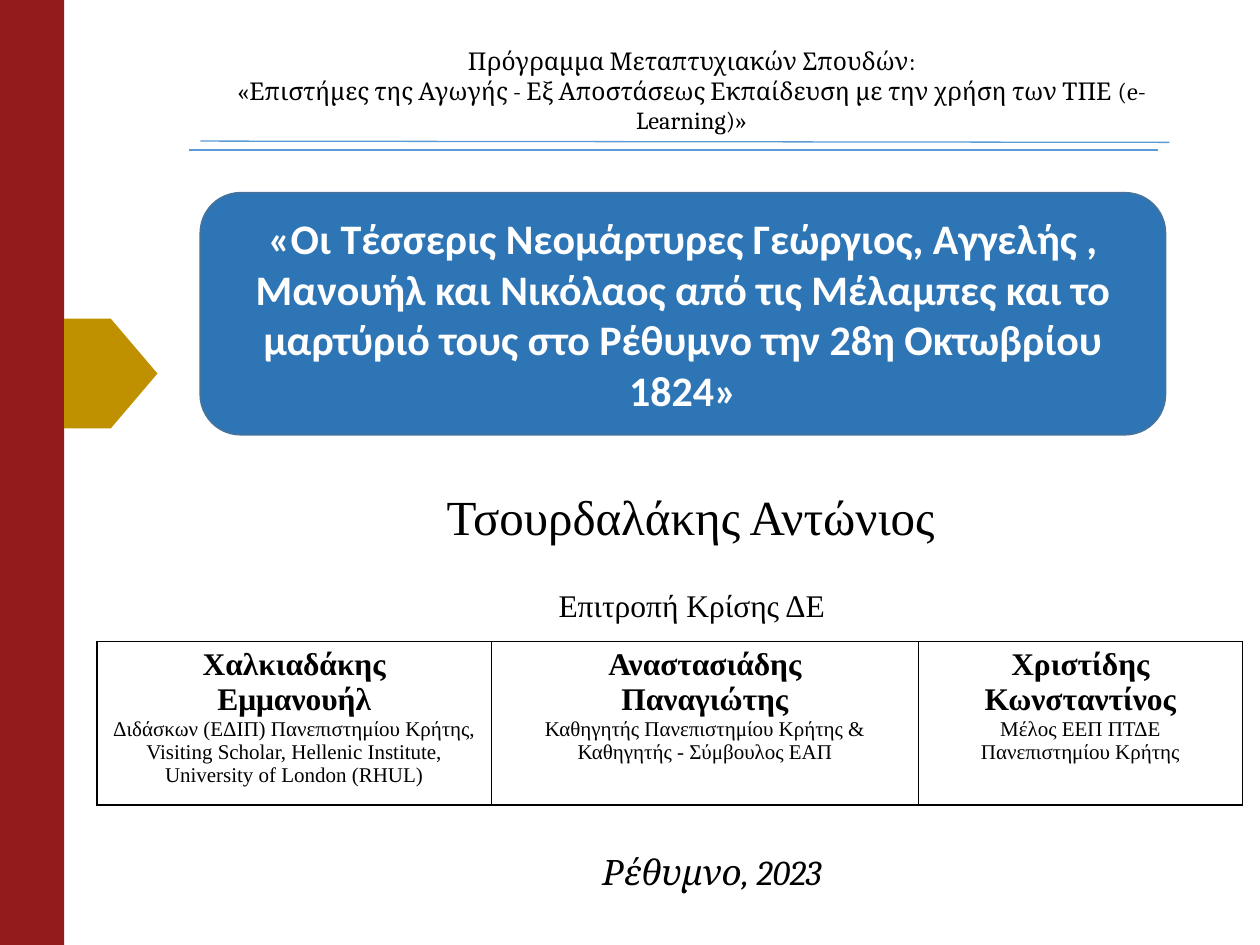
from lxml.etree import SubElement as Sub
from pptx import Presentation
from pptx.dml.color import RGBColor as Rgb
from pptx.enum.shapes import MSO_CONNECTOR as Conn, MSO_SHAPE as Kind
from pptx.enum.text import MSO_ANCHOR as Anchor, PP_ALIGN as Align
from pptx.oxml.ns import qn
from pptx.util import Inches, Pt

RED = Rgb(0x93, 0x1B, 0x1B)
GOLD = Rgb(0xBF, 0x90, 0x00)
SKY = Rgb(0x5B, 0x9B, 0xD5)
BLUE = Rgb(0x2E, 0x75, 0xB6)
EDGE = Rgb(0x43, 0x73, 0x9E)
BLACK = Rgb(0, 0, 0)
WHITE = Rgb(255, 255, 255)

SERIF = "Times New Roman"
HEAD = {"name": "Cambria", "size": Pt(14)}
PLACE = {"name": "Cambria", "size": Pt(20), "italic": True}
TITLE = {"name": "Calibri", "size": Pt(24), "bold": True}
AUTHOR = {"name": SERIF, "size": Pt(28)}
LABEL = {"name": SERIF, "size": Pt(18)}
NAME = {"name": SERIF, "size": Pt(18), "bold": True}
ROLE = {"name": SERIF, "size": Pt(12), "bold": False}

PANEL = [
    (["Χαλκιαδάκης", "Εμμανουήλ"],
     ["Διδάσκων (ΕΔΙΠ) Πανεπιστημίου Κρήτης,",
      "Visiting Scholar, Hellenic Institute, University of London (RHUL)"]),
    (["Αναστασιάδης", "Παναγιώτης"],
     ["Καθηγητής Πανεπιστημίου Κρήτης & Καθηγητής - Σύμβουλος ΕΑΠ"]),
    (["Χριστίδης", "Κωνσταντίνος"],
     ["Μέλος ΕΕΠ ΠΤΔΕ", "Πανεπιστημίου Κρήτης"]),
]


class Page:
    """Draws styled elements on one slide, measured on a grid of 100 columns by 75 rows."""

    def __init__(self, deck):
        self.slide = deck.slides.add_slide(deck.slide_layouts[6])
        self.shapes = self.slide.shapes
        self.col = deck.slide_width / 100
        self.row = deck.slide_height / 75

    def grid(self, x, y, w, h):
        return [round(n * u) for n, u in zip((x, y, w, h), (self.col, self.row) * 2)]

    def fill_text(self, frame, lines, color=BLACK):
        frame.word_wrap = True
        for i, (text, style) in enumerate(lines):
            para = frame.paragraphs[0] if i == 0 else frame.add_paragraph()
            para.alignment = Align.CENTER
            run = para.add_run()
            run.text = text
            run.font.color.rgb = color
            for key, val in style.items():
                setattr(run.font, key, val)

    def text(self, box, style, *lines, anchor=Anchor.TOP):
        frame = self.shapes.add_textbox(*self.grid(*box)).text_frame
        frame.vertical_anchor = anchor
        self.fill_text(frame, [(line, style) for line in lines])

    def shape(self, kind, box, fill, edge=None):
        item = self.shapes.add_shape(kind, *self.grid(*box))
        item.shadow.inherit = False
        item.fill.solid()
        item.fill.fore_color.rgb = fill
        if edge is None:
            item.line.fill.background()
        else:
            item.line.color.rgb = edge
            item.line.width = Pt(1)
        return item

    def card(self, box, fill, edge, text, style):
        frame = self.shape(Kind.ROUNDED_RECTANGLE, box, fill, edge).text_frame
        frame.vertical_anchor = Anchor.MIDDLE
        self.fill_text(frame, [(text, style)], WHITE)

    def line(self, ends, color):
        item = self.shapes.add_connector(Conn.STRAIGHT, *self.grid(*ends))
        item.line.color.rgb = color
        item.line.width = Pt(0.75)
        Sub(item._element.spPr, qn("a:effectLst"))

    def frame(self, cell):
        props = cell._tc.get_or_add_tcPr()
        for side in ("lnL", "lnR", "lnT", "lnB"):
            edge = Sub(props, qn("a:" + side), w=str(Pt(1)))
            Sub(Sub(edge, qn("a:solidFill")), qn("a:srgbClr"), val=str(BLACK))

    def table(self, box, cols, panel):
        grid = self.shapes.add_table(1, len(cols), *self.grid(*box)).table
        grid.first_row = grid.horz_banding = False
        for i, (width, (names, roles)) in enumerate(zip(cols, panel)):
            grid.columns[i].width = round(width * self.col)
            cell = grid.cell(0, i)
            self.frame(cell)
            cell.fill.solid()
            cell.fill.fore_color.rgb = WHITE
            lines = [(n, NAME) for n in names] + [(r, ROLE) for r in roles]
            self.fill_text(cell.text_frame, lines)


def main():
    deck = Presentation()
    deck.slide_width, deck.slide_height = Inches(10), Inches(7.5)
    page = Page(deck)
    page.shape(Kind.RECTANGLE, (0, 0, 5.1, 75), RED)
    page.shape(Kind.PENTAGON, (5.1, 25.3, 7.4, 8.7), GOLD)
    page.text((14.4, 3.2, 81, 5.7), HEAD, "Πρόγραμμα Μεταπτυχιακών Σπουδών:",
              "«Επιστήμες της Αγωγής - Εξ Αποστάσεως Εκπαίδευση με την χρήση "
              "των ΤΠΕ (e-Learning)»")
    page.line((15.9, 11.2, 92.8, 11.3), SKY)
    page.line((15, 11.9, 91.9, 11.9), SKY)
    page.card((15.9, 15.3, 76.6, 19.2), BLUE, EDGE,
              "«Οι Τέσσερις Νεομάρτυρες Γεώργιος, Αγγελής , Μανουήλ και Νικόλαος "
              "από τις Μέλαμπες και το μαρτύριό τους στο Ρέθυμνο την "
              "28η Οκτωβρίου 1824»", TITLE)
    page.text((17.4, 38.1, 74.8, 5.7), AUTHOR, "Τσουρδαλάκης Αντώνιος")
    page.text((17.5, 46, 74.8, 4), LABEL, "Επιτροπή Κρίσης ΔΕ")
    page.table((7.7, 50.9, 90.9, 13), (31.3, 33.9, 25.7), PANEL)
    page.text((17.1, 67, 78.8, 4.4), PLACE, "Ρέθυμνο, 2023", anchor=Anchor.MIDDLE)
    deck.save("out.pptx")


if __name__ == "__main__":
    main()
